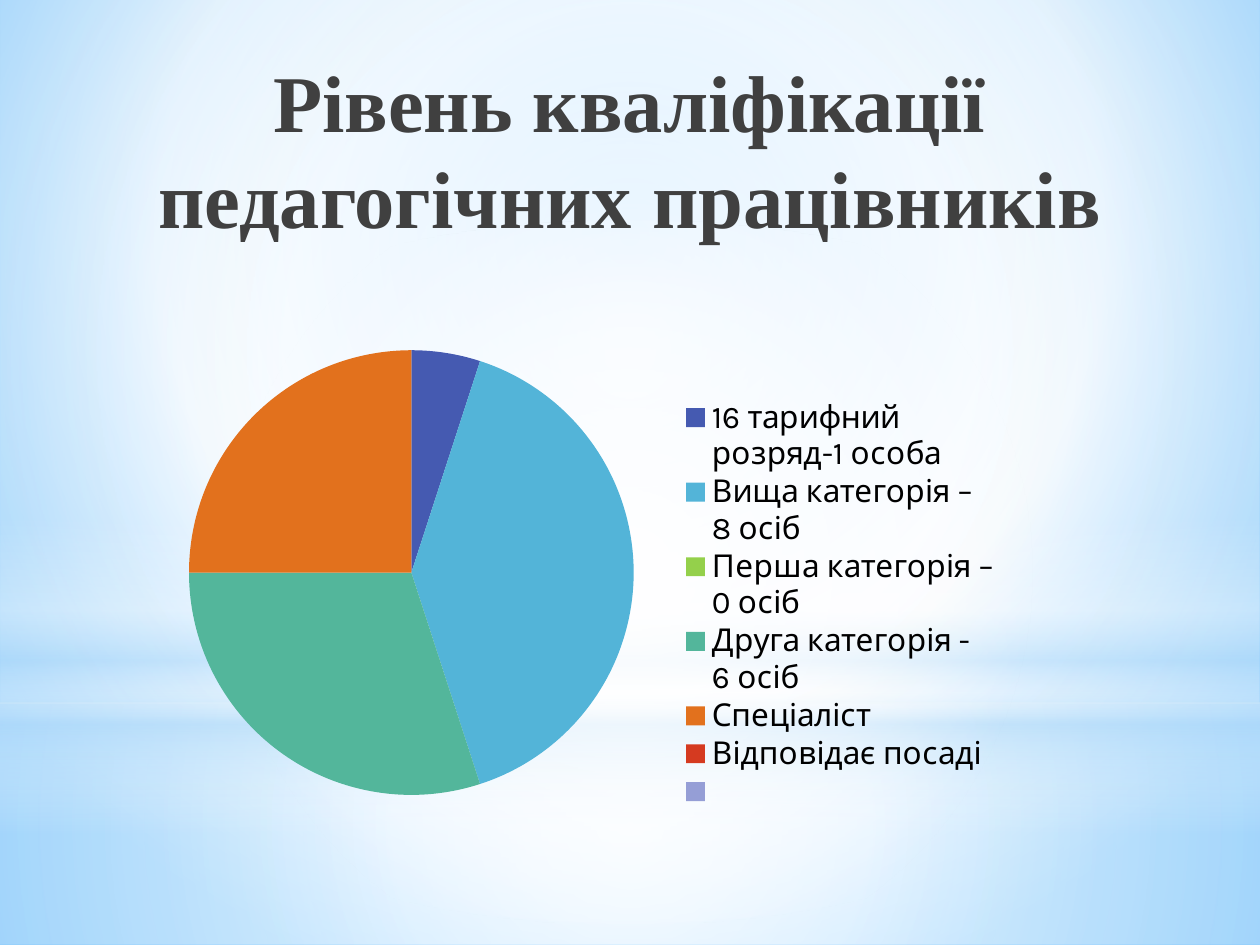
from lxml.etree import SubElement
from pptx import Presentation
from pptx.chart.data import CategoryChartData
from pptx.dml.color import RGBColor
from pptx.enum.chart import XL_CHART_TYPE, XL_LEGEND_POSITION
from pptx.enum.shapes import MSO_SHAPE
from pptx.enum.text import MSO_ANCHOR, PP_ALIGN
from pptx.oxml.ns import qn
from pptx.util import Inches, Pt

COLORS = {
    "white": "FFFFFF", "mist": "B4DCFA", "sky": "9ED5FF", "azure": "5BB9FF",
    "black": "000000", "title": "404040",
    "indigo": "455AB1", "cyan": "53B4D8", "lime": "94D04B", "teal": "53B69B",
    "orange": "E2711D", "red": "D53A20", "lilac": "959ED6",
}
CENTER = (50, 50, 50, 50)
BACKGROUND = [(0, "sky", 100), (60, "white", 100), (100, "azure", 100)]
LAYERS = [
    (MSO_SHAPE.RECTANGLE, (0, 5.58, 10, 1.92), CENTER,
     [(0, "white", 91), (37, "white", 76), (100, "mist", 79)]),
    (MSO_SHAPE.RECTANGLE, (0, 0, 10, 5.58), CENTER,
     [(0, "white", 89), (48, "white", 62), (100, "mist", 79)]),
    (MSO_SHAPE.RECTANGLE, (0, 4.12, 10, 2.5), None,
     [(0, "white", 0), (29, "white", 30), (45, "mist", 40),
      (55, "white", 26), (65, "mist", 60), (100, "white", 0)]),
    (MSO_SHAPE.OVAL, (0, 1.75, 10, 5.58), CENTER,
     [(0, "white", 100), (56, "white", 0)]),
]
TITLE = "Рівень кваліфікації педагогічних працівників"
TITLE_FORMAT = {"name": "Times New Roman", "size": Pt(46), "bold": True}
LEGEND_FORMAT = {"name": "Karla", "size": Pt(18)}
CHART_PLACE = (1.06, 2.65, 7, 3.8)
PIE_PLACE = (1.5, 2.78, 3.53, 3.53)
LEGEND_PLACE = (5.5, 3.16, 2.45, 3.28)
QUALIFICATIONS = [
    ("16 тарифний розряд-1 особа", 5, "indigo"),
    ("Вища категорія – 8 осіб", 40, "cyan"),
    ("Перша категорія – 0 осіб", 0, "lime"),
    ("Друга категорія - 6 осіб", 30, "teal"),
    ("Спеціаліст", 25, "orange"),
    ("Відповідає посаді", None, "red"),
    (" ", None, "lilac"),
]


def rgb(name):
    """Return the named colour."""
    return RGBColor.from_string(COLORS[name])


def format_font(font, values, color):
    """Set font attributes and colour."""
    for name, value in values.items():
        setattr(font, name, value)
    font.color.rgb = rgb(color)


def paint_gradient(fill, owner, stops, focus):
    """Give a fill a circular gradient, or a vertical one without a focus."""
    fill.solid()
    solid = owner.find(qn("a:solidFill"))
    gradient = owner.makeelement(qn("a:gradFill"), {"rotWithShape": "1"})
    owner.replace(solid, gradient)
    stop_list = SubElement(gradient, qn("a:gsLst"))
    for position, name, opacity in stops:
        stop = SubElement(stop_list, qn("a:gs"), pos=str(position * 1000))
        color = SubElement(stop, qn("a:srgbClr"), val=COLORS[name])
        if opacity < 100:
            SubElement(color, qn("a:alpha"), val=str(opacity * 1000))
    if focus:
        circle = SubElement(gradient, qn("a:path"), {"path": "circle"})
        sides = {side: str(share * 1000) for side, share in zip("ltrb", focus)}
        SubElement(circle, qn("a:fillToRect"), sides)
    else:
        SubElement(gradient, qn("a:lin"), ang="5400000", scaled="0")


def paint_background(page):
    """Paint the slide background."""
    fill = page.background.fill
    fill.solid()
    owner = page._element.find(".//" + qn("p:bgPr"))
    paint_gradient(fill, owner, BACKGROUND, (20, 10, 20, 60))


def add_layer(page, kind, place, focus, stops):
    """Add a translucent light layer."""
    shape = page.shapes.add_shape(kind, *map(Inches, place))
    shape.shadow.inherit = False
    shape.line.fill.background()
    paint_gradient(shape.fill, shape._element.spPr, stops, focus)


def add_title(page):
    """Add the centred heading."""
    box = page.shapes.add_textbox(*map(Inches, (0.43, 0.36, 9.13, 1.73)))
    frame = box.text_frame
    frame.word_wrap = True
    frame.vertical_anchor = MSO_ANCHOR.TOP
    para = frame.paragraphs[0]
    para.alignment = PP_ALIGN.CENTER
    span = para.add_run()
    span.text = TITLE
    format_font(span.font, TITLE_FORMAT, "title")


def place_part(part, place, previous=None, inner=False):
    """Fix a chart part at a place on the slide given in inches."""
    for old in part.findall(qn("c:layout")):
        part.remove(old)
    layout = part.makeelement(qn("c:layout"), {})
    part.insert(0 if previous is None else part.index(previous) + 1, layout)
    manual = SubElement(layout, qn("c:manualLayout"))
    if inner:
        SubElement(manual, qn("c:layoutTarget"), val="inner")
    for mode in ("xMode", "yMode"):
        SubElement(manual, qn(f"c:{mode}"), val="edge")
    left, top, width, height = CHART_PLACE
    shares = {
        "x": (place[0] - left) / width, "y": (place[1] - top) / height,
        "w": place[2] / width, "h": place[3] / height,
    }
    for name, share in shares.items():
        SubElement(manual, qn(f"c:{name}"), val=f"{share:.4f}")


def add_pie(page):
    """Add the pie of qualification levels with its legend."""
    labels, shares, colors = zip(*QUALIFICATIONS)
    data = CategoryChartData()
    data.categories = labels
    data.add_series("Series 1", shares)
    place = map(Inches, CHART_PLACE)
    chart = page.shapes.add_chart(XL_CHART_TYPE.PIE, *place, data).chart
    chart.has_title = False
    format_font(chart.font, LEGEND_FORMAT, "black")
    chart.has_legend = True
    chart.legend.position = XL_LEGEND_POSITION.RIGHT
    chart.legend.include_in_layout = False
    area = chart._chartSpace.find(".//" + qn("c:plotArea"))
    place_part(area, PIE_PLACE, inner=True)
    legend = chart._chartSpace.find(".//" + qn("c:legend"))
    place_part(legend, LEGEND_PLACE, legend.find(qn("c:legendPos")))
    plot = chart.plots[0]
    plot.vary_by_categories = True
    for index, color in enumerate(colors):
        fill = plot.series[0].points[index].format.fill
        fill.solid()
        fill.fore_color.rgb = rgb(color)


def main():
    """Build and save the slide."""
    deck = Presentation()
    deck.slide_width, deck.slide_height = Inches(10), Inches(7.5)
    page = deck.slides.add_slide(deck.slide_layouts[6])
    paint_background(page)
    for layer in LAYERS:
        add_layer(page, *layer)
    add_title(page)
    add_pie(page)
    deck.save("out.pptx")


if __name__ == "__main__":
    main()
